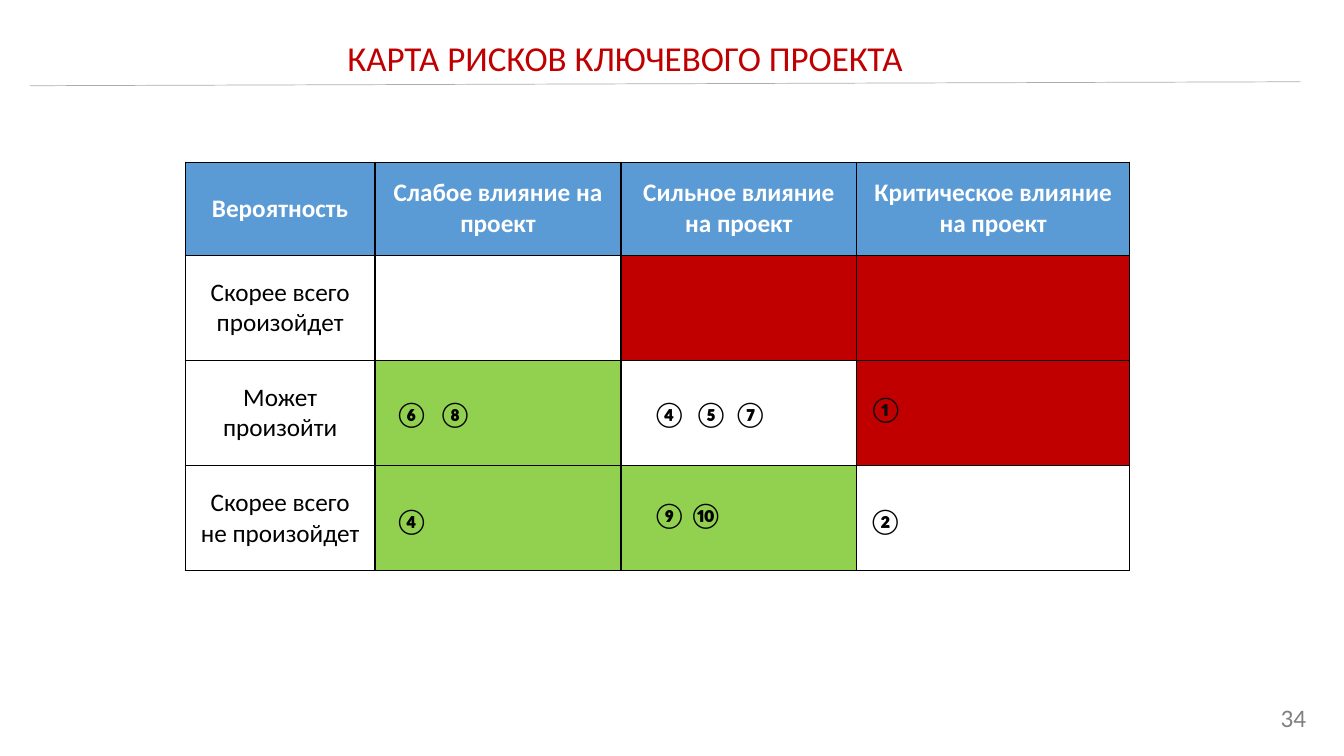
from dataclasses import dataclass

from lxml import etree
from pptx import Presentation
from pptx import util as u
from pptx.dml.color import RGBColor
from pptx.enum import shapes, text
from pptx.oxml import ns

COLORS = {
    "black": "000000",
    "white": "FFFFFF",
    "red": "C00000",
    "blue": "5B9BD5",
    "green": "92D050",
    "ink": "0D0D0D",
    "rule": "AFABAB",
    "page": "808080",
}
FONT = "Calibri"
CENTER = text.PP_ALIGN.CENTER
LEFT = text.PP_ALIGN.LEFT
RIGHT = text.PP_ALIGN.RIGHT

COLUMN_WIDTHS = [4.78, 6.2, 5.94, 6.88]
ROW_HEIGHTS = [2.34, 2.65, 2.65, 2.65]
HEADERS = ["Вероятность", "Слабое влияние на проект",
           "Сильное влияние на проект", "Критическое влияние на проект"]
LIKELIHOODS = ["Скорее всего произойдет", "Может произойти", "Скорее всего не произойдет"]
RISK_FILLS = [
    ["", "red", "red"],
    ["green", "", "red"],
    ["green", "green", ""],
]


@dataclass
class Label:
    text: str
    left: float
    top: float
    width: float = 1.37
    height: float = 1.02
    size: float = 18
    color: str = "black"
    bold: bool = True
    align: text.PP_ALIGN = LEFT
    wrap: bool = False
    anchor: text.MSO_ANCHOR = text.MSO_ANCHOR.TOP


LABELS = [
    Label("КАРТА РИСКОВ КЛЮЧЕВОГО ПРОЕКТА", 8.09, 0.79, 15.32, 1.32, 25, "red", False, CENTER),
    Label("34", 25.55, 17.58, 7.62, 1.02, 18, "page", False, RIGHT, True,
          text.MSO_ANCHOR.MIDDLE),
    Label("①", 21.64, 9.78, color="ink", align=CENTER),
    Label("⑥", 9.7, 9.91),
    Label("⑧", 10.8, 9.91),
    Label("④", 16.2, 9.91),
    Label("⑤", 17.25, 9.91, width=1.3, wrap=True),
    Label("⑦", 18.24, 9.91),
    Label("④", 9.7, 12.6),
    Label("⑨", 16.2, 12.47),
    Label("⑩", 17.12, 12.47),
    Label("②", 21.64, 12.6),
]


def rgb(name: str) -> RGBColor:
    return RGBColor.from_string(COLORS[name])


def write(paragraph, content: str, size: float, color: str, bold: bool,
          align: text.PP_ALIGN) -> None:
    paragraph.alignment = align
    run = paragraph.add_run()
    run.text = content
    run.font.name = FONT
    run.font.size = u.Pt(size)
    run.font.bold = bold
    run.font.color.rgb = rgb(color)


def draw_label(slide, label: Label) -> None:
    box = slide.shapes.add_textbox(
        u.Cm(label.left), u.Cm(label.top), u.Cm(label.width), u.Cm(label.height))
    frame = box.text_frame
    frame.word_wrap = label.wrap
    frame.vertical_anchor = label.anchor
    write(frame.paragraphs[0], label.text, label.size, label.color, label.bold, label.align)


def draw_borders(cell) -> None:
    properties = cell._tc.get_or_add_tcPr()
    for side in ("a:lnL", "a:lnR", "a:lnT", "a:lnB"):
        line = etree.SubElement(properties, ns.qn(side), w=str(u.Pt(1)))
        fill = etree.SubElement(line, ns.qn("a:solidFill"))
        etree.SubElement(fill, ns.qn("a:srgbClr"), val=COLORS["black"])


def paint(cell, color: str) -> None:
    if not color:
        cell.fill.background()
        return
    cell.fill.solid()
    cell.fill.fore_color.rgb = rgb(color)
    if color == "green":
        swatch = cell._tc.tcPr.find(".//" + ns.qn("a:srgbClr"))
        etree.SubElement(swatch, ns.qn("a:alpha"), val="60000")


def draw_risk_table(slide) -> None:
    table = slide.shapes.add_table(
        len(ROW_HEIGHTS), len(COLUMN_WIDTHS), u.Cm(4.67), u.Cm(4.09),
        u.Cm(sum(COLUMN_WIDTHS)), u.Cm(sum(ROW_HEIGHTS))).table
    table.first_row = False
    table.horz_banding = False
    for column, width in zip(table.columns, COLUMN_WIDTHS):
        column.width = u.Cm(width)
    for row, height in zip(table.rows, ROW_HEIGHTS):
        row.height = u.Cm(height)

    contents = [HEADERS] + [[name, "", "", ""] for name in LIKELIHOODS]
    fills = [["blue"] * len(HEADERS)] + [["", *row] for row in RISK_FILLS]
    for row_index, row in enumerate(contents):
        header = row_index == 0
        for column_index, content in enumerate(row):
            cell = table.cell(row_index, column_index)
            draw_borders(cell)
            paint(cell, fills[row_index][column_index])
            cell.vertical_anchor = text.MSO_ANCHOR.MIDDLE
            if content:
                write(cell.text_frame.paragraphs[0], content, 18,
                      "white" if header else "black", header, CENTER)


def draw_title_rule(slide) -> None:
    rule = slide.shapes.add_connector(
        shapes.MSO_CONNECTOR.STRAIGHT, u.Cm(0.76), u.Cm(2.16), u.Cm(32.77), u.Cm(2.06))
    rule.line.color.rgb = rgb("rule")
    rule.line.width = u.Pt(0.5)
    etree.SubElement(rule._element.spPr, ns.qn("a:effectLst"))


def main() -> None:
    presentation = Presentation()
    presentation.slide_width = u.Cm(33.87)
    presentation.slide_height = u.Cm(19.05)
    slide = presentation.slides.add_slide(presentation.slide_layouts[6])
    draw_risk_table(slide)
    draw_title_rule(slide)
    for label in LABELS:
        draw_label(slide, label)
    presentation.save("out.pptx")


if __name__ == "__main__":
    main()
